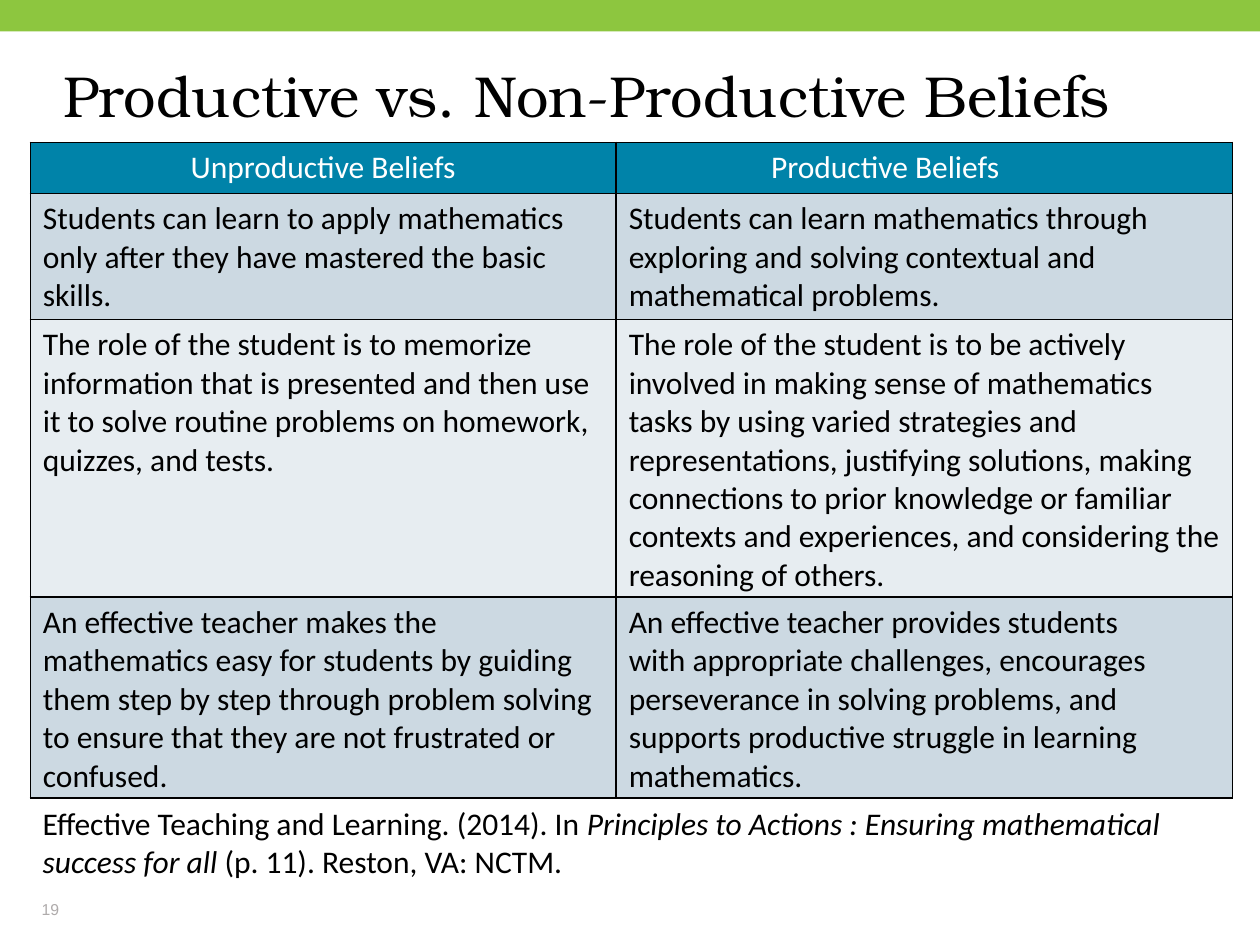
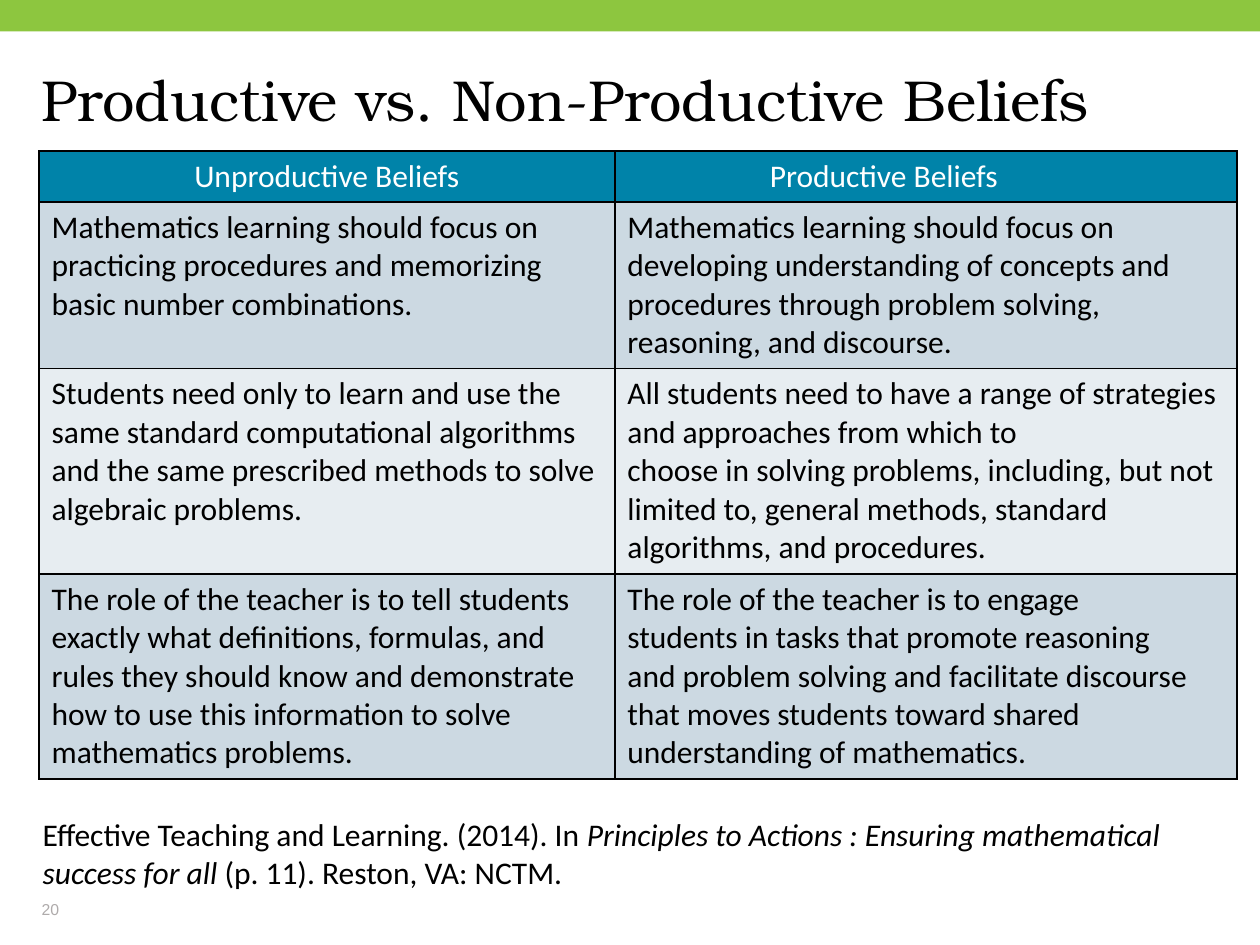
from dataclasses import dataclass

from lxml.etree import SubElement
from pptx import Presentation
from pptx.dml.color import RGBColor
from pptx.enum.shapes import MSO_SHAPE
from pptx.enum.text import MSO_ANCHOR, MSO_AUTO_SIZE, PP_ALIGN
from pptx.oxml.ns import qn
from pptx.util import Inches, Pt

COLS, ROWS = 100, 75
UNIT = 0.1


@dataclass(frozen=True)
class Theme:
    band: str = "8DC63F"
    header: str = "0083A9"
    stripes: tuple = ("CCD9E2", "E7EDF1")
    ink: str = "000000"
    paper: str = "FFFFFF"
    muted: str = "AFABAB"
    title_font: str = "TeX Gyre Bonum"
    body_font: str = "Calibri"
    number_font: str = "Arial"
    title_size: int = 33
    body_size: int = 18
    number_size: int = 9
    border: int = 1


@dataclass(frozen=True)
class Box:
    x: float
    y: float
    w: float
    h: float

    def emu(self):
        return [grid(v) for v in (self.x, self.y, self.w, self.h)]


THEME = Theme()
TITLE = "Productive vs. Non-Productive Beliefs"
HEADINGS = ("Unproductive Beliefs", "Productive Beliefs")
HEADING_INDENT = 12.3
CITATION = (
    ("Effective Teaching and Learning. (2014). In ", False),
    ("Principles to Actions : Ensuring mathematical success for all", True),
    (" (p. 11). Reston, VA: NCTM.", False),
)
BAND_BOX = Box(0, 0, COLS, 2.5)
NUMBER_BOX = Box(3.3, 70.5, 22.5, 2.4)

SLIDES = (
    dict(
        number="19",
        title_box=Box(5, 5.4, 90, 8.7),
        table_box=Box(2.4, 11.3, 95.4, 52.05),
        citation_box=Box(2.4, 63.3, 94.4, 7.1),
        widths=(46.5, 48.9),
        heights=(4.05, 10, 22.05, 15.95),
        beliefs=(
            ("Students can learn to apply mathematics only after they have "
             "mastered the basic skills.",
             "Students can learn mathematics through\n"
             "exploring and solving contextual and\n"
             "mathematical problems."),
            ("The role of the student is to memorize\n"
             "information that is presented and then use it to solve routine "
             "problems on homework, quizzes, and tests.",
             "The role of the student is to be actively\n"
             "involved in making sense of mathematics\n"
             "tasks by using varied strategies and\n"
             "representations, justifying solutions, making connections to "
             "prior knowledge or familiar contexts and experiences, and "
             "considering the reasoning of others."),
            ("An effective teacher makes the mathematics easy for students by "
             "guiding them step by step through problem solving to ensure "
             "that they are not frustrated or confused.",
             "An effective teacher provides students\n"
             "with appropriate challenges, encourages\n"
             "perseverance in solving problems, and\n"
             "supports productive struggle in learning\n"
             "mathematics."),
        ),
    ),
    dict(
        number="20",
        title_box=Box(3.3, 5.7, 93.1, 12.7),
        table_box=Box(3.1, 12, 95.1, 49.85),
        citation_box=Box(2.4, 64.2, 94.4, 7.1),
        widths=(45.7, 49.4),
        heights=(4.05, 13.2, 16.3, 16.3),
        beliefs=(
            ("Mathematics learning should focus on\n"
             "practicing procedures and memorizing basic number combinations.",
             "Mathematics learning should focus on developing understanding "
             "of concepts and procedures through problem solving, reasoning, "
             "and discourse."),
            ("Students need only to learn and use the same standard "
             "computational algorithms and the same prescribed methods to "
             "solve algebraic problems.",
             "All students need to have a range of strategies and approaches "
             "from which to\n"
             "choose in solving problems, including, but not limited to, "
             "general methods, standard algorithms, and procedures."),
            ("The role of the teacher is to tell students exactly what "
             "definitions, formulas, and rules they should know and "
             "demonstrate how to use this information to solve\n"
             "mathematics problems.",
             "The role of the teacher is to engage\n"
             "students in tasks that promote reasoning\n"
             "and problem solving and facilitate discourse that moves "
             "students toward shared understanding of mathematics."),
        ),
    ),
)


def grid(value):
    return Inches(value * UNIT)


def rgb(value):
    return RGBColor.from_string(value)


def add_run(p, text, font, size, color, italic=False):
    r = p.add_run()
    r.text = text
    r.font.name = font
    r.font.size = Pt(size)
    r.font.italic = italic
    r.font.color.rgb = rgb(color)


def clear_insets(tf):
    tf.margin_left = tf.margin_right = tf.margin_top = tf.margin_bottom = 0


def add_band(s, box):
    sp = s.shapes.add_shape(MSO_SHAPE.RECTANGLE, *box.emu())
    sp.shadow.inherit = False
    sp.fill.solid()
    sp.fill.fore_color.rgb = rgb(THEME.band)
    sp.line.fill.background()


def place_title(s, box):
    sp = s.shapes.title
    sp.left, sp.top, sp.width, sp.height = box.emu()
    tf = sp.text_frame
    clear_insets(tf)
    tf.word_wrap = True
    tf.auto_size = MSO_AUTO_SIZE.NONE
    tf.vertical_anchor = MSO_ANCHOR.TOP
    p = tf.paragraphs[0]
    p.alignment = PP_ALIGN.LEFT
    p.line_spacing = 0.9
    add_run(p, TITLE, THEME.title_font, THEME.title_size, THEME.ink)


def add_number(s, box, number):
    tf = s.shapes.add_textbox(*box.emu()).text_frame
    clear_insets(tf)
    tf.word_wrap = True
    tf.vertical_anchor = MSO_ANCHOR.BOTTOM
    add_run(tf.paragraphs[0], number, THEME.number_font, THEME.number_size,
            THEME.muted)


def add_citation(s, box):
    tf = s.shapes.add_textbox(*box.emu()).text_frame
    tf.word_wrap = True
    for text, italic in CITATION:
        add_run(tf.paragraphs[0], text, THEME.body_font, THEME.body_size,
                THEME.ink, italic)


def set_borders(cell):
    tc_pr = cell._tc.get_or_add_tcPr()
    for side in ("a:lnL", "a:lnR", "a:lnT", "a:lnB"):
        ln = SubElement(tc_pr, qn(side), w=str(Pt(THEME.border)))
        fill = SubElement(ln, qn("a:solidFill"))
        SubElement(fill, qn("a:srgbClr"), val=THEME.ink)


def fill_cell(cell, text, fill, color):
    set_borders(cell)
    cell.fill.solid()
    cell.fill.fore_color.rgb = rgb(fill)
    cell.margin_bottom = grid(0.2)
    tf = cell.text_frame
    for i, line in enumerate(text.split("\n")):
        p = tf.add_paragraph() if i else tf.paragraphs[0]
        add_run(p, line, THEME.body_font, THEME.body_size, color)


def add_beliefs(s, box, widths, heights, beliefs):
    rows = (HEADINGS, *beliefs)
    table = s.shapes.add_table(len(rows), len(widths), *box.emu()).table
    table.first_row = table.horz_banding = False
    for column, width in zip(table.columns, widths):
        column.width = grid(width)
    for i, (height, texts) in enumerate(zip(heights, rows)):
        table.rows[i].height = grid(height)
        fill = THEME.stripes[(i - 1) % 2] if i else THEME.header
        color = THEME.ink if i else THEME.paper
        for j, text in enumerate(texts):
            fill_cell(table.cell(i, j), text, fill, color)
    left, right = table.cell(0, 0), table.cell(0, 1)
    left.text_frame.paragraphs[0].alignment = PP_ALIGN.CENTER
    right.margin_left = grid(HEADING_INDENT)


def add_beliefs_slide(prs, number, title_box, table_box, citation_box,
                      widths, heights, beliefs):
    s = prs.slides.add_slide(prs.slide_layouts[5])
    add_band(s, BAND_BOX)
    place_title(s, title_box)
    add_number(s, NUMBER_BOX, number)
    add_beliefs(s, table_box, widths, heights, beliefs)
    add_citation(s, citation_box)


def main():
    prs = Presentation()
    prs.slide_width, prs.slide_height = grid(COLS), grid(ROWS)
    for content in SLIDES:
        add_beliefs_slide(prs, **content)
    prs.save("out.pptx")


if __name__ == "__main__":
    main()
